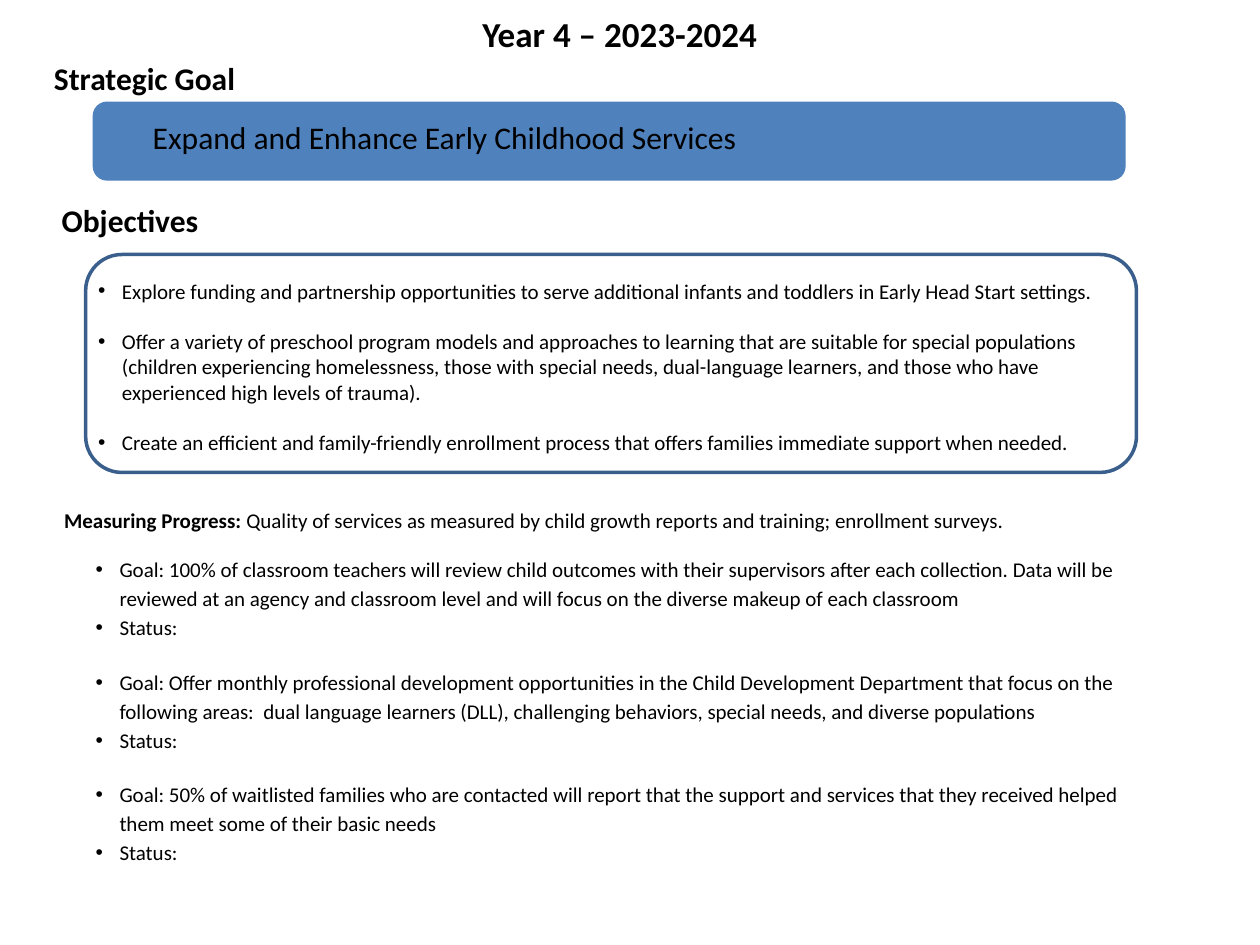
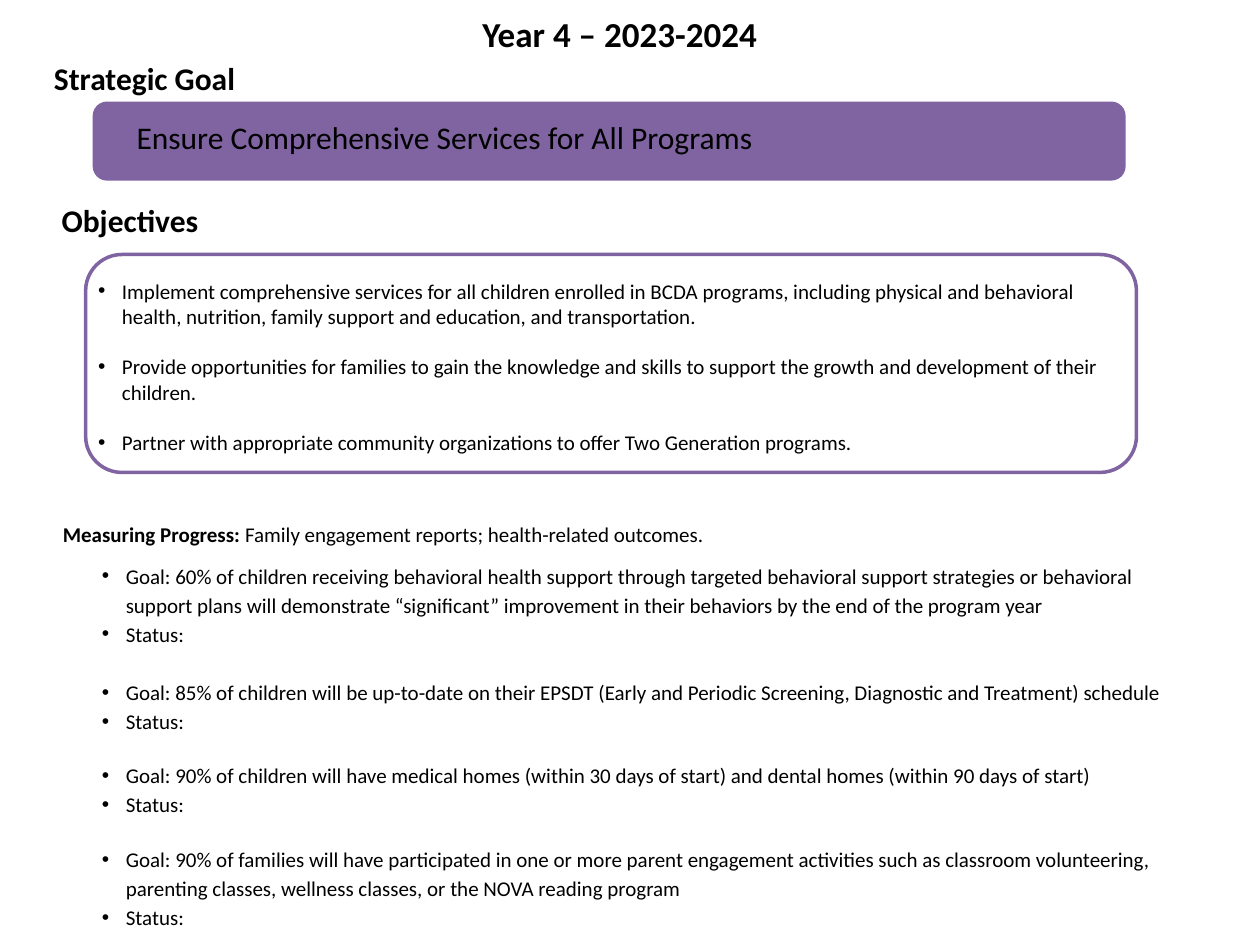
from lxml.etree import SubElement
from pptx import Presentation
from pptx.dml.color import RGBColor
from pptx.enum.shapes import MSO_SHAPE as SHAPE
from pptx.enum.text import MSO_ANCHOR as ANCHOR, PP_ALIGN as ALIGN
from pptx.oxml.ns import qn
from pptx.util import Inches, Pt

FONT, INK = "Calibri", "000000"
HANG = 0.19
LINE_GAP = 14.6

HEADINGS = [
    ("Strategic Goal", (0.33, 0.42, 4.08, 0.4), 18),
    ("Objectives", (0.39, 1.55, 4.08, 0.4), 18),
    ("Year 4 – 2023-2024", (3.73, 0.05, 2.42, 0.44), 20),
]
BAND, GOAL_BOX = (0.75, 0.82, 8.17, 0.6), (0.78, 0.75, 5.5, 0.68)
FRAME = (0.68, 2.02, 8.34, 1.73)

SLIDES = [
    {
        "band": "4F81BD",
        "frame": "3A5F8C",
        "goal": "Expand and Enhance Early Childhood Services",
        "objectives_at": (0.68, 1.93, 8.5, 1.96),
        "objectives": [
            "Explore funding and partnership opportunities to serve additional infants and toddlers in Early Head Start settings.",
            "Offer a variety of preschool program models and approaches to learning that are suitable for special populations (children experiencing homelessness, those with special needs, dual-language learners, and those who have experienced high levels of trauma).",
            "Create an efficient and family-friendly enrollment process that offers families immediate support when needed.",
        ],
        "measure_at": (0.41, 3.98, 8.85, 0.3),
        "measure": "Quality of services as measured by child growth reports and training; enrollment surveys.",
        "targets_at": (0.66, 4.34, 8.69, 2.83),
        "targets": [
            (0, "100% of classroom teachers will review child outcomes with their supervisors after each collection. Data will be reviewed at an agency and classroom level and will focus on the diverse makeup of each classroom"),
            (LINE_GAP, "Offer monthly professional development opportunities in the Child Development Department that focus on the following areas:  dual language learners (DLL), challenging behaviors, special needs, and diverse populations"),
            (LINE_GAP, "50% of waitlisted families who are contacted will report that the support and services that they received helped them meet some of their basic needs"),
        ],
    },
    {
        "band": "8064A2",
        "frame": "8064A2",
        "goal": "Ensure Comprehensive Services for All Programs",
        "objectives_at": (0.68, 1.93, 8.4, 1.96),
        "objectives": [
            "Implement comprehensive services for all children enrolled in BCDA programs, including physical and behavioral health, nutrition, family support and education, and transportation.",
            "Provide opportunities for families to gain the knowledge and skills to support the growth and development of their children.",
            "Partner with appropriate community organizations to offer Two Generation programs.",
        ],
        "measure_at": (0.4, 4.09, 8.85, 0.3),
        "measure": "Family engagement reports; health-related outcomes.",
        "targets_at": (0.71, 4.39, 8.69, 3.46),
        "targets": [
            (0, "60% of children receiving behavioral health support through targeted behavioral support strategies or behavioral support plans will demonstrate “significant” improvement in their behaviors by the end of the program year"),
            (16.8, "85% of children will be up-to-date on their EPSDT (Early and Periodic Screening, Diagnostic and Treatment) schedule"),
            (LINE_GAP, "90% of children will have medical homes (within 30 days of start) and dental homes (within 90 days of start)"),
            (LINE_GAP, "90% of families will have participated in one or more parent engagement activities such as classroom volunteering, parenting classes, wellness classes, or the NOVA reading program"),
        ],
    },
]


def color(hex_text):
    return RGBColor.from_string(hex_text)


def add_bullet(p):
    pPr = p._p.get_or_add_pPr()
    pPr.set("marL", str(Inches(HANG)))
    pPr.set("indent", str(-Inches(HANG)))
    SubElement(pPr, qn("a:buFont")).set("typeface", "Arial")
    SubElement(pPr, qn("a:buChar")).set("char", "•")


def add_text(s, at, paragraphs, size=12, align=ALIGN.LEFT, anchor=ANCHOR.TOP,
             bullet=False, spacing=None):
    """Add a text box from (space before, [(text, bold), ...]) paragraphs."""
    tf = s.shapes.add_textbox(*map(Inches, at)).text_frame
    tf.word_wrap, tf.vertical_anchor = True, anchor
    for i, (before, runs) in enumerate(paragraphs):
        p = tf.add_paragraph() if i else tf.paragraphs[0]
        p.alignment, p.space_before = align, Pt(before)
        if spacing:
            p.line_spacing = spacing
        if bullet:
            add_bullet(p)
        for text, bold in runs:
            r = p.add_run()
            r.text = text
            r.font.name, r.font.size, r.font.bold = FONT, Pt(size), bold
            r.font.color.rgb = color(INK)


def add_round_box(s, at, line, fill=None):
    sp = s.shapes.add_shape(SHAPE.ROUNDED_RECTANGLE, *map(Inches, at))
    sp.shadow.inherit = False
    if fill:
        sp.fill.solid()
        sp.fill.fore_color.rgb = color(fill)
    else:
        sp.fill.background()
    sp.line.color.rgb, sp.line.width = color(line), Pt(2)


def build_slide(prs, data):
    s = prs.slides.add_slide(prs.slide_layouts[6])
    add_round_box(s, BAND, data["band"], data["band"])
    add_text(s, GOAL_BOX, [(0, [(data["goal"], False)])], size=18,
             align=ALIGN.CENTER, anchor=ANCHOR.MIDDLE)
    add_round_box(s, FRAME, data["frame"])
    objectives = [(LINE_GAP if i else 0, [(text, False)])
                  for i, text in enumerate(data["objectives"])]
    add_text(s, data["objectives_at"], objectives, anchor=ANCHOR.MIDDLE, bullet=True)
    add_text(s, data["measure_at"],
             [(0, [("Measuring Progress: ", True), (data["measure"], False)])])
    targets = []
    for gap, text in data["targets"]:
        targets += [(gap, [("Goal: " + text, False)]), (0, [("Status:", False)])]
    add_text(s, data["targets_at"], targets, bullet=True, spacing=1.15)
    for text, at, size in HEADINGS:
        add_text(s, at, [(0, [(text, True)])], size=size)


def main():
    prs = Presentation()
    prs.slide_width, prs.slide_height = Inches(10), Inches(7.5)
    for data in SLIDES:
        build_slide(prs, data)
    prs.save("out.pptx")


if __name__ == "__main__":
    main()
